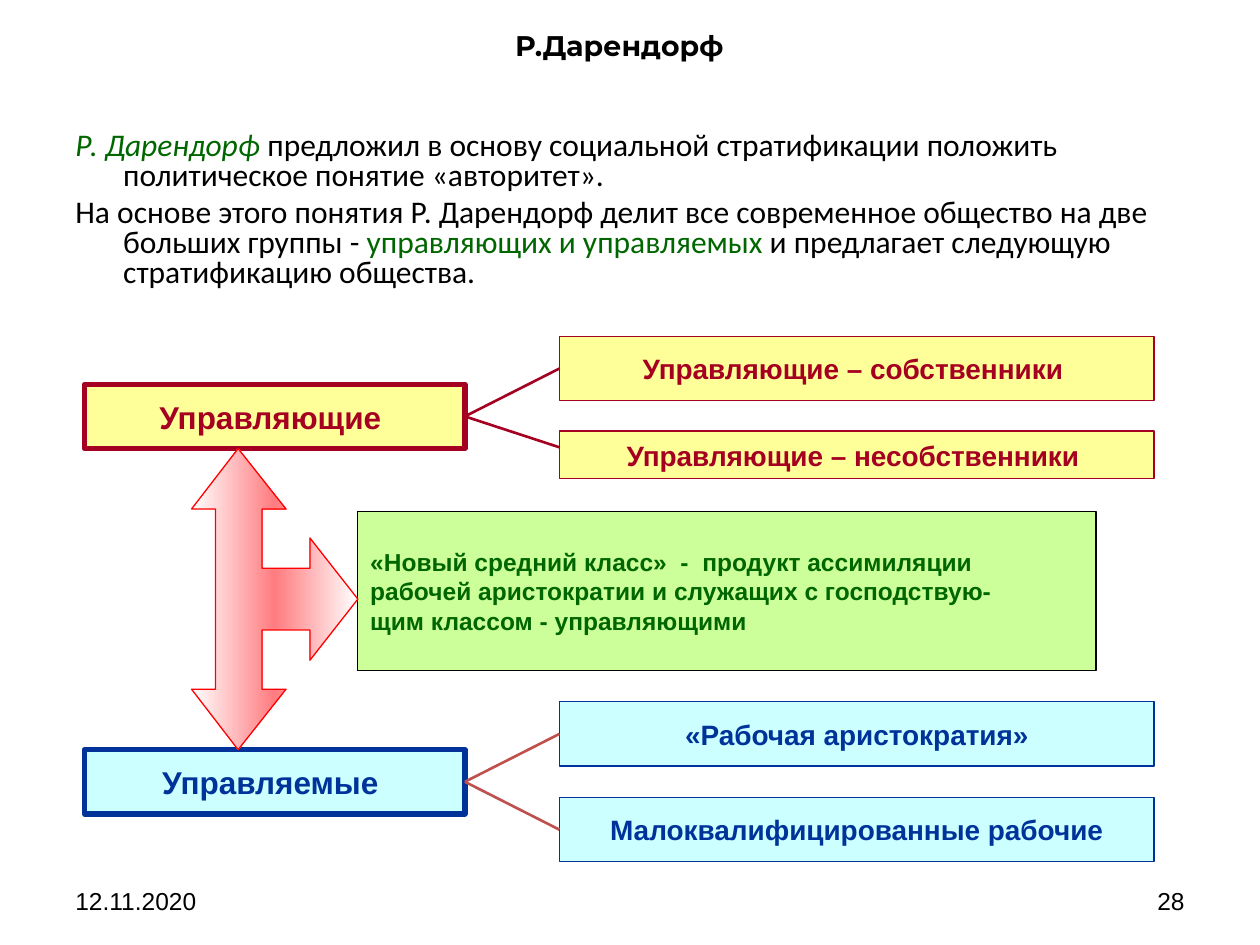
"""Build a slide on Dahrendorf's split of society into rulers and ruled."""
import copy

import pptx
import pptx.dml.color
import pptx.enum.shapes
import pptx.enum.text
import pptx.oxml
import pptx.oxml.ns
import pptx.util

Inches = pptx.util.Inches
Pt = pptx.util.Pt
RGBColor = pptx.dml.color.RGBColor
ALIGN = pptx.enum.text.PP_ALIGN
MIDDLE = pptx.enum.text.MSO_ANCHOR.MIDDLE

BLACK = RGBColor(0x00, 0x00, 0x00)
WHITE = RGBColor(0xFF, 0xFF, 0xFF)
GREEN = RGBColor(0x00, 0x66, 0x00)
LIME = RGBColor(0xCC, 0xFF, 0x99)
WINE = RGBColor(0xA5, 0x00, 0x21)
YELLOW = RGBColor(0xFF, 0xFF, 0x99)
NAVY = RGBColor(0x00, 0x33, 0x99)
AQUA = RGBColor(0xCC, 0xFF, 0xFF)
BRICK = RGBColor(0xC0, 0x50, 0x4D)
RED = RGBColor(0xFF, 0x00, 0x00)
PINK = RGBColor(0xFF, 0x7C, 0x80)

BODY = [
    [("Р. Дарендорф", GREEN, True),
     (" предложил в основу социальной стратификации положить "
      "политическое понятие «авторитет».", BLACK, False)],
    [("На основе этого понятия Р. Дарендорф делит все современное "
      "общество на две больших группы - ", BLACK, False),
     ("управляющих и управляемых", GREEN, False),
     (" и предлагает следующую стратификацию общества.", BLACK, False)],
]
CLASS = [
    "«Новый средний класс»  -  продукт ассимиляции",
    "рабочей аристократии и служащих с господствую-",
    "щим классом - управляющими",
]


def write(frame, lines, size, color, align, bold=False, face="Arial"):
    """Fill a text frame with evenly styled lines, centred in height."""
    frame.vertical_anchor = MIDDLE
    for index, line in enumerate(lines):
        para = frame.add_paragraph() if index else frame.paragraphs[0]
        para.text = line
        para.alignment = align
        para.font.size = Pt(size)
        para.font.name = face
        para.font.bold = bold
        para.font.color.rgb = color


def add_frame(slide, left, top, width, height):
    """Add a wrapping text box and return its frame."""
    frame = slide.shapes.add_textbox(
        Inches(left), Inches(top), Inches(width), Inches(height)).text_frame
    frame.word_wrap = True
    return frame


def add_body(slide):
    """Add the two hanging paragraphs with coloured runs."""
    frame = add_frame(slide, 0.5, 1, 9, 1.4)
    for index, parts in enumerate(BODY):
        para = frame.add_paragraph() if index else frame.paragraphs[0]
        props = para._p.get_or_add_pPr()
        props.set("marL", str(Inches(0.38)))
        props.set("indent", str(Inches(-0.38)))
        para.line_spacing = 0.8
        para.space_before = Pt(3.6 if index else 0)
        para.font.size = Pt(18)
        para.font.name = "Calibri"
        for text, color, slant in parts:
            run = para.add_run()
            run.text = text
            run.font.color.rgb = color
            run.font.italic = slant


def add_box(slide, place, lines, size, fill, ink, edge, width=0.75,
            align=ALIGN.CENTER):
    """Add a framed rectangle with bold text."""
    box = slide.shapes.add_shape(
        pptx.enum.shapes.MSO_SHAPE.RECTANGLE, *map(Inches, place))
    box.shadow.inherit = False
    box.fill.solid()
    box.fill.fore_color.rgb = fill
    box.line.color.rgb = edge
    box.line.width = Pt(width)
    box.text_frame.word_wrap = False
    write(box.text_frame, lines, size, ink, align, True)
    return box


def add_arrow(slide):
    """Add the three-headed arrow, mirrored about its middle height."""
    axis = 4.755
    upper = [(2.46, 4.27), (2.46, 4.51), (2.08, 4.51), (2.08, 4.04),
             (2.27, 4.04), (1.89, 3.56), (1.52, 4.04), (1.71, 4.04)]
    lower = [(x, 2 * axis - y) for x, y in reversed(upper)]
    pen = slide.shapes.build_freeform(Inches(2.84), Inches(axis))
    pen.add_line_segments(
        [(Inches(x), Inches(y)) for x, y in upper + lower], close=True)
    arrow = pen.convert_to_shape()
    arrow.shadow.inherit = False
    arrow.line.color.rgb = RED
    arrow.line.width = Pt(0.75)
    arrow.fill.gradient()
    arrow.fill.gradient_angle = 0
    stops = arrow._element.spPr.find(".//" + pptx.oxml.ns.qn("a:gsLst"))
    stops.append(copy.deepcopy(stops[0]))
    tints = zip(arrow.fill.gradient_stops, (0, 0.5, 1), (WHITE, PINK, WHITE))
    for stop, place, tint in tints:
        stop.position = place
        stop.color.rgb = tint


def add_link(slide, start, end, color, drop=None):
    """Join two boxes side to side, or end at a given height."""
    target = end.top + end.height // 2 if drop is None else Inches(drop)
    link = slide.shapes.add_connector(
        pptx.enum.shapes.MSO_CONNECTOR.STRAIGHT,
        start.left + start.width, start.top + start.height // 2,
        end.left, target)
    link.begin_connect(start, 3)
    if drop is None:
        link.end_connect(end, 1)
    link.line.color.rgb = color
    link.line.width = Pt(1.5)
    pptx.oxml.ns.qn("a:effectLst")
    link._element.spPr.append(
        pptx.oxml.parse_xml("<a:effectLst %s/>" % pptx.oxml.ns.nsdecls("a")))


def main():
    """Build and save the slide."""
    deck = pptx.Presentation()
    deck.slide_width, deck.slide_height = Inches(10), Inches(7.5)
    slide = deck.slides.add_slide(deck.slide_layouts[6])

    write(add_frame(slide, 0.75, 0.17, 8.33, 0.37), ["Р.Дарендорф"], 16.2,
          BLACK, ALIGN.CENTER, True, "Montserrat")
    add_body(slide)
    write(add_frame(slide, 0.5, 6.95, 2.33, 0.4), ["12.11.2020"], 14,
          BLACK, ALIGN.LEFT)
    write(add_frame(slide, 7.17, 6.95, 2.33, 0.4), ["28"], 14,
          BLACK, ALIGN.RIGHT)

    groups = [
        (3.05, "Управляющие ", YELLOW, WINE, WINE,
         [(2.67, 0.51, "Управляющие – собственники ", None),
          (3.42, 0.38, "Управляющие – несобственники ", 3.55)]),
        (5.95, "Управляемые ", AQUA, NAVY, BRICK,
         [(5.57, 0.51, "«Рабочая аристократия»", None),
          (6.33, 0.51, "Малоквалифицированные рабочие", None)]),
    ]
    for top, name, fill, ink, tint, parts in groups:
        head = add_box(slide, (0.67, top, 3.02, 0.51), [name], 18,
                       fill, ink, ink, 3)
        for level, height, text, drop in parts:
            part = add_box(slide, (4.44, level, 4.72, height), [text], 16,
                           fill, ink, ink)
            add_link(slide, head, part, tint, drop)

    add_box(slide, (2.84, 4.06, 5.86, 1.26), CLASS, 14, LIME, GREEN, BLACK,
            align=ALIGN.LEFT)
    add_arrow(slide)
    deck.save("out.pptx")


if __name__ == "__main__":
    main()
